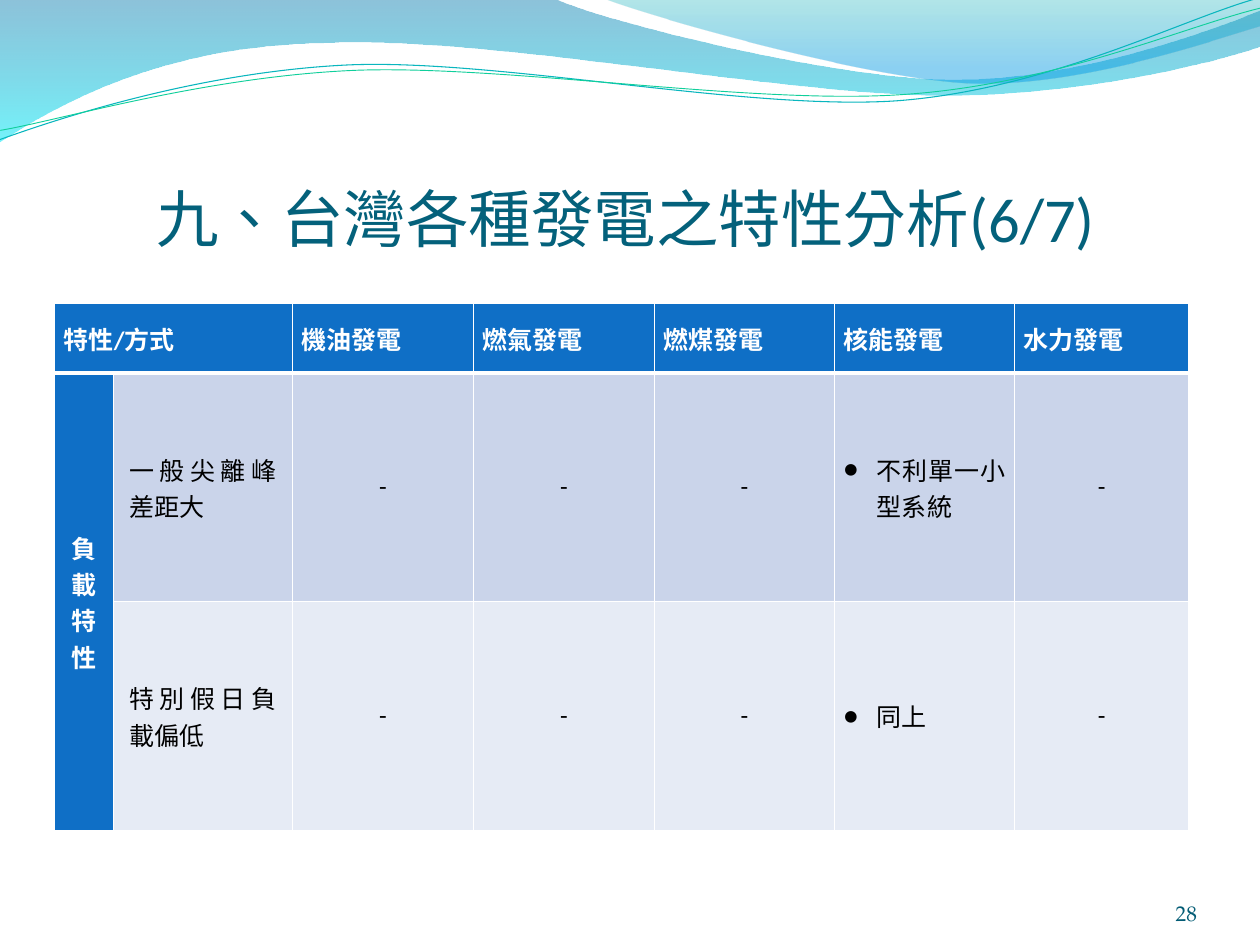
from lxml.etree import SubElement
from pptx import Presentation
from pptx.dml.color import RGBColor
from pptx.enum.text import MSO_ANCHOR, MSO_AUTO_SIZE, PP_ALIGN
from pptx.oxml.ns import qn
from pptx.util import Cm, Pt

COLORS = {
    "title": "04617B", "number": "035C75", "header": "0F6FC6",
    "band_dark": "CAD4EA", "band_light": "E6EBF5", "white": "FFFFFF", "black": "000000",
    "deep_blue": "0079AD", "cyan": "00E9F7", "teal": "00ABB4", "sky": "0099E4",
    "teal_line": "09B6BE", "green_line": "10CF9B",
}
# Each outline is a start point followed by segments in cm:
# two numbers for a straight line, six for a cubic curve.
FILLED_WAVES = [
    ([(0, -0.03), (15.65, -0.03), (16.92, 0.58, 23.6, 2.24, 26.97, 2.24),
      (30.33, 2.24, 34.09, 0.91, 35.56, 0.3), (35.59, 1.3),
      (34.98, 1.55, 30.94, 2.69, 26.52, 2.69), (22.12, 2.67, 13.56, 0.99, 9.14, 1.22),
      (4.6, 1.27, 1.63, 2.95, -0.03, 4.01)],
     [(0, "deep_blue", 45), (1, "cyan", 55)]),
    ([(17.04, -0.03), (18.11, 0.41, 24.26, 2.18, 27.33, 2.34),
      (30.43, 2.46, 34.19, 1.14, 35.56, 0.74), (35.56, 0)],
     [(0, "teal", 30), (0.8, "sky", 45)]),
]
LINE_WAVES = [
    ([(-0.07, 3.1), (1.66, 2.57, 5.63, 1.46, 9.85, 1.46),
      (14.09, 1.48, 21.03, 3.3, 25.3, 3.2), (29.58, 3.07, 33.43, 1.27, 35.57, 0.79)],
     "teal_line", 0.85),
    ([(-0.05, 2.84), (1.63, 2.64, 5.83, 1.59, 10.07, 1.62),
      (14.34, 1.67, 21.19, 3.13, 25.47, 3.03), (29.72, 2.95, 33.5, 1.48, 35.63, 1.07)],
     "green_line", 0.75),
]
LINE_ROTATION = 357.3
COLUMN_WIDTHS = [1.65, 5.05, 5.11, 5.11, 5.08, 5.08, 4.92]
ROW_HEIGHTS = [1.96, 6.45, 6.45]
ROWS = [
    ["特性/方式", "", "機油發電", "燃氣發電", "燃煤發電", "核能發電", "水力發電"],
    ["負載特性", "一般尖離峰差距大", "-", "-", "-", "不利單一小型系統", "-"],
    ["", "特別假日負載偏低", "-", "-", "-", "同上", "-"],
]
BULLET_COLUMN = 5


def color(name):
    return RGBColor.from_string(COLORS[name])


def set_values(target, values):
    for name, value in values.items():
        setattr(target, name, value)


def write_text(frame, text, size, color_name, alignment, font="Calibri", bold=False):
    paragraph = frame.paragraphs[0]
    run = paragraph.add_run()
    run.text = text
    run._r.get_or_add_rPr().set("lang", "zh-TW")
    paragraph.alignment = alignment
    set_values(run.font, {"name": font, "size": Pt(size), "bold": bold})
    run.font.color.rgb = color(color_name)
    return paragraph


def add_outline(slide, outline, left, top, close):
    """Build a freeform from end points, then bend its curved segments."""
    points = [(Cm(left + segment[-2]), Cm(top + segment[-1])) for segment in outline]
    builder = slide.shapes.build_freeform(*points[0])
    builder.add_line_segments(points[1:], close=close)
    shape = builder.convert_to_shape()
    shape.shadow.inherit = False
    for element, segment in zip(list(shape._element.iter(qn("a:lnTo"))), outline[1:]):
        if len(segment) == 2:
            continue
        element.tag = qn("a:cubicBezTo")
        end_point = element[0]
        for x, y in (segment[:2], segment[2:4]):
            SubElement(element, qn("a:pt"), x=str(Cm(left + x) - shape.left),
                       y=str(Cm(top + y) - shape.top))
        element.append(end_point)
    return shape


def add_waves(slide, left, top):
    for outline, stops in FILLED_WAVES:
        shape = add_outline(slide, outline, left, top, True)
        shape.line.fill.background()
        shape.fill.gradient()
        shape.fill.gradient_angle = 270
        for stop, (position, name, opacity) in zip(shape.fill.gradient_stops, stops):
            stop.position = position
            stop.color.rgb = color(name)
        stop_colors = shape._element.spPr.iter(qn("a:srgbClr"))
        for element, (position, name, opacity) in zip(stop_colors, stops):
            SubElement(element, qn("a:alpha"), val=str(opacity * 1000))
    for outline, name, width in LINE_WAVES:
        shape = add_outline(slide, outline, left, top, False)
        shape.rotation = LINE_ROTATION
        shape.fill.background()
        shape.line.color.rgb = color(name)
        shape.line.width = Pt(width)


def place_title(slide, left, top, width, height):
    title = slide.shapes.title
    set_values(title, {"left": Cm(left), "top": Cm(top),
                       "width": Cm(width), "height": Cm(height)})
    set_values(title.text_frame, {
        "auto_size": MSO_AUTO_SIZE.NONE, "word_wrap": True,
        "vertical_anchor": MSO_ANCHOR.BOTTOM, "margin_left": 0, "margin_right": 0,
        "margin_top": Cm(0.18), "margin_bottom": 0})
    write_text(title.text_frame, "九、台灣各種發電之特性分析(6/7)", 50, "title", PP_ALIGN.CENTER)
    title._element.getparent().append(title._element)  # in front of the waves


def add_borders(cell, widths):
    properties = cell._tc.get_or_add_tcPr()
    for side, width in widths.items():
        line = SubElement(properties, qn(f"a:ln{side}"), w=str(Pt(width)))
        fill = SubElement(line, qn("a:solidFill"))
        SubElement(fill, qn("a:srgbClr"), val=COLORS["white"])


def set_indent(paragraph, left, right=0, first=0, bullet=None):
    properties = paragraph._p.get_or_add_pPr()
    for name, length in {"marL": left, "marR": right, "indent": first}.items():
        properties.set(name, str(Cm(length)))
    if bullet:
        bullet_color = SubElement(properties, qn("a:buClr"))
        SubElement(bullet_color, qn("a:srgbClr"), val=COLORS["black"])
        SubElement(properties, qn("a:buFont"), typeface="Calibri")
        SubElement(properties, qn("a:buChar"), char=bullet)


def format_cell(cell, row, column, text):
    is_header = row == 0 or column == 0
    add_borders(cell, {"L": 1, "R": 1, "T": 3 if row == 1 else 1, "B": 3 if row == 0 else 1})
    cell.fill.solid()
    band = "band_dark" if row == 1 else "band_light"
    cell.fill.fore_color.rgb = color("header" if is_header else band)
    set_values(cell, {"vertical_anchor": MSO_ANCHOR.MIDDLE, "margin_left": Cm(0.25),
                      "margin_right": Cm(0.25), "margin_top": 0, "margin_bottom": 0})
    if not text:
        return
    centered = text == "-" or (row > 0 and column == 0)
    paragraph = write_text(cell.text_frame, text, 20, "white" if is_header else "black",
                           PP_ALIGN.CENTER if centered else PP_ALIGN.JUSTIFY, bold=is_header)
    if row > 0 and column < 2:
        set_indent(paragraph, 0.2, right=0.2)
    elif row > 0 and column == BULLET_COLUMN:
        set_indent(paragraph, 0.95, first=-0.95, bullet="●")


def add_feature_table(slide, left, top):
    frame = slide.shapes.add_table(len(ROW_HEIGHTS), len(COLUMN_WIDTHS), Cm(left), Cm(top),
                                   Cm(sum(COLUMN_WIDTHS)), Cm(sum(ROW_HEIGHTS)))
    table = frame.table
    table.horz_banding = False
    for column, width in zip(table.columns, COLUMN_WIDTHS):
        column.width = Cm(width)
    for row, height in zip(table.rows, ROW_HEIGHTS):
        row.height = Cm(height)
    table.cell(0, 0).merge(table.cell(0, 1))
    table.cell(1, 0).merge(table.cell(2, 0))
    for row, texts in enumerate(ROWS):
        for column, text in enumerate(texts):
            format_cell(table.cell(row, column), row, column, text)


def add_page_number(slide, left, top, width, height):
    frame = slide.shapes.add_textbox(Cm(left), Cm(top), Cm(width), Cm(height)).text_frame
    set_values(frame, {"word_wrap": True, "vertical_anchor": MSO_ANCHOR.BOTTOM,
                       "margin_left": 0, "margin_right": 0, "margin_top": 0,
                       "margin_bottom": 0})
    write_text(frame, "28", 17, "number", PP_ALIGN.RIGHT, font="TeX Gyre Pagella")


def main():
    presentation = Presentation()
    presentation.slide_width = Cm(35.56)
    presentation.slide_height = Cm(26.67)
    slide = presentation.slides.add_slide(presentation.slide_layouts.get_by_name("Title Only"))
    add_waves(slide, 0, 0)
    place_title(slide, 1, 2.74, 33.32, 4.45)
    add_feature_table(slide, 1.55, 8.57)
    add_page_number(slide, 30.81, 24.71, 2.97, 1.42)
    presentation.save("out.pptx")


if __name__ == "__main__":
    main()
